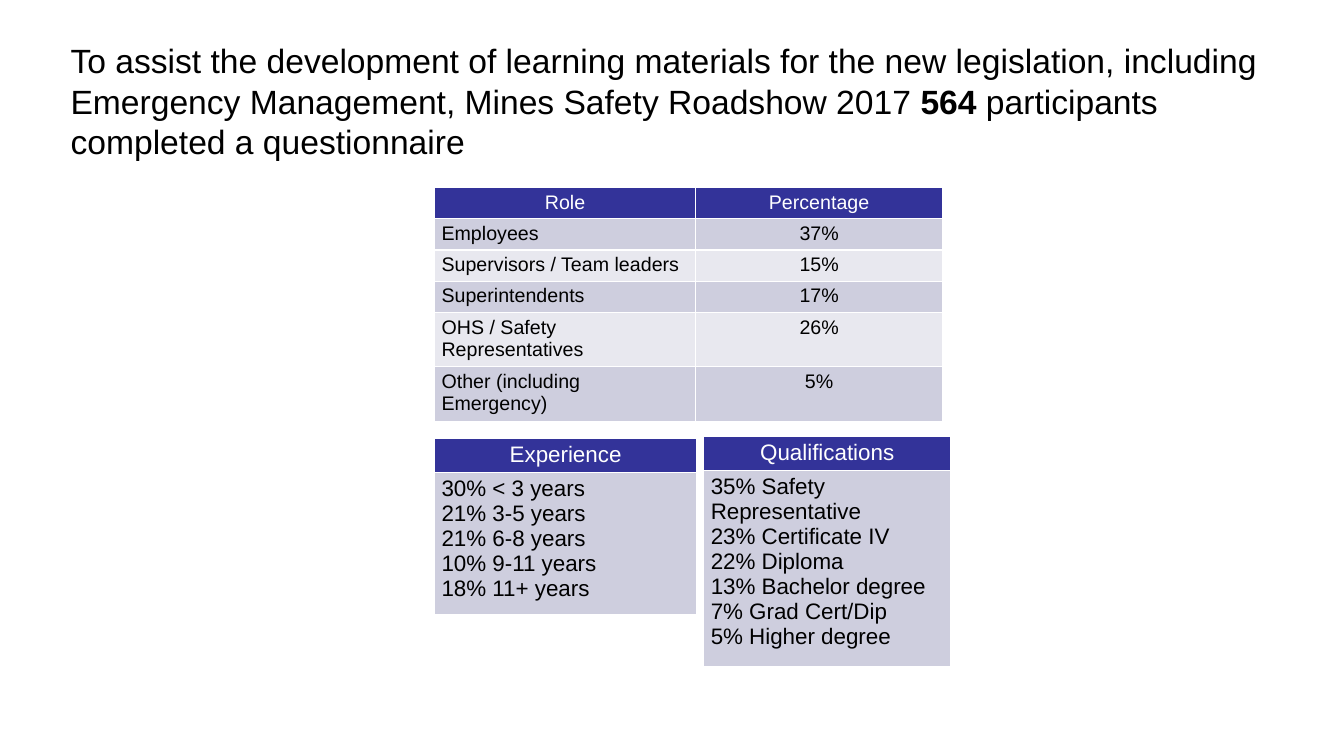
from lxml import etree
from pptx import Presentation
from pptx.dml.color import RGBColor
from pptx.enum.text import MSO_ANCHOR, MSO_AUTO_SIZE, PP_ALIGN
from pptx.oxml.ns import qn
from pptx.util import Inches, Pt

LEFT, CENTER = PP_ALIGN.LEFT, PP_ALIGN.CENTER
TOP = MSO_ANCHOR.TOP
NO_AUTOFIT = MSO_AUTO_SIZE.NONE
TITLE_ONLY = 5
FONT = "Arial"
HEADER, DARK_BAND, LIGHT_BAND = "333399", "CECEDE", "E8E8EF"
WHITE, BLACK = "FFFFFF", "000000"

TITLE = [
    ("To assist the development of learning materials for the new legislation, "
     "including Emergency Management, Mines Safety Roadshow 2017 ", False),
    ("564 ", True),
    ("participants completed a questionnaire", False),
]
ROLES = [
    ("Role", "Percentage"),
    ("Employees", "37%"),
    ("Supervisors / Team leaders", "15%"),
    ("Superintendents", "17%"),
    ("OHS / Safety Representatives", "26%"),
    ("Other (including Emergency)", "5%"),
]
EXPERIENCE = ["30% < 3 years", "21% 3-5 years", "21% 6-8 years",
              "10% 9-11 years", "18% 11+ years"]
QUALIFICATIONS = ["35% Safety Representative", "23% Certificate IV", "22% Diploma",
                  "13% Bachelor degree", "7% Grad Cert/Dip", "5% Higher degree"]


def rgb(value):
    return RGBColor.from_string(value)


def style_run(r, size, color, bold=False):
    r.font.name = FONT
    r.font.size = Pt(size)
    r.font.bold = bold
    r.font.color.rgb = rgb(color)


def add_borders(cell):
    tc_pr = cell._tc.get_or_add_tcPr()
    for i, side in enumerate(("lnL", "lnR", "lnT", "lnB")):
        ln = etree.Element(qn(f"a:{side}"), w=str(Pt(1)))
        fill = etree.SubElement(ln, qn("a:solidFill"))
        etree.SubElement(fill, qn("a:srgbClr"), val=WHITE)
        tc_pr.insert(i, ln)


def fill_cell(cell, text, size, fill, color, align):
    cell.margin_left = cell.margin_right = Inches(0.07)
    cell.margin_top = cell.margin_bottom = Inches(0.04)
    cell.vertical_anchor = TOP
    cell.fill.solid()
    cell.fill.fore_color.rgb = rgb(fill)
    add_borders(cell)
    cell.text_frame.text = text
    for p in cell.text_frame.paragraphs:
        p.alignment = align
        for r in p.runs:
            style_run(r, size, color)


def add_grid(s, left, top, widths, heights, rows, size):
    frame = s.shapes.add_table(len(rows), len(widths), Inches(left), Inches(top),
                               Inches(sum(widths)), Inches(sum(heights)))
    table = frame.table
    table.first_row = table.horz_banding = False
    for column, width in zip(table.columns, widths):
        column.width = Inches(width)
    for i, (height, texts) in enumerate(zip(heights, rows)):
        table.rows[i].height = Inches(height)
        band = HEADER if i == 0 else DARK_BAND if i % 2 else LIGHT_BAND
        for j, text in enumerate(texts):
            fill_cell(table.cell(i, j), text, size, band,
                      WHITE if i == 0 else BLACK,
                      CENTER if i == 0 or j else LEFT)


def add_title(s, left, top, width, height):
    sp = s.shapes.title
    sp.left, sp.top = Inches(left), Inches(top)
    sp.width, sp.height = Inches(width), Inches(height)
    tf = sp.text_frame
    tf.word_wrap = True
    tf.auto_size = NO_AUTOFIT
    tf.vertical_anchor = TOP
    p = tf.paragraphs[0]
    p.alignment = LEFT
    for text, bold in TITLE:
        r = p.add_run()
        r.text = text
        style_run(r, 24, BLACK, bold)


def add_roles(s, left, top):
    add_grid(s, left, top, [2.59, 2.45], [0.31] * 4 + [0.54] * 2, ROLES, 14)


def add_breakdown(s, left, top, width, height, heading, items):
    header_height = 0.34
    add_grid(s, left, top, [width], [header_height, height - header_height],
             [(heading,), ("\n".join(items),)], 16)


def main():
    prs = Presentation()
    prs.slide_width, prs.slide_height = Inches(13.33), Inches(7.5)
    s = prs.slides.add_slide(prs.slide_layouts[TITLE_ONLY])
    add_title(s, 0.6, 0.35, 12.47, 1.72)
    add_roles(s, 4.31, 1.86)
    add_breakdown(s, 4.31, 4.35, 2.6, 1.75, "Experience", EXPERIENCE)
    add_breakdown(s, 6.98, 4.33, 2.45, 2.28, "Qualifications", QUALIFICATIONS)
    prs.save("out.pptx")


if __name__ == "__main__":
    main()
